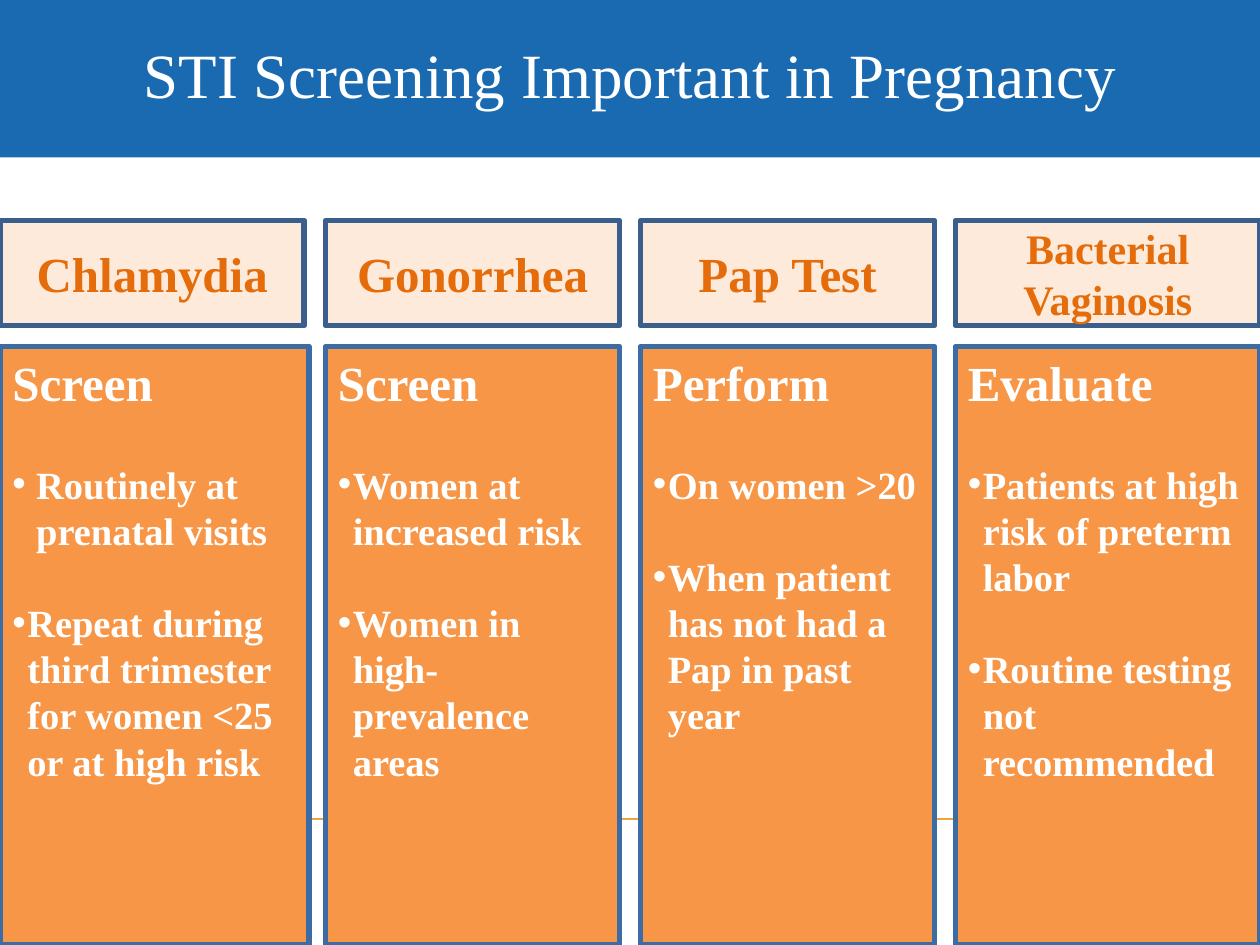
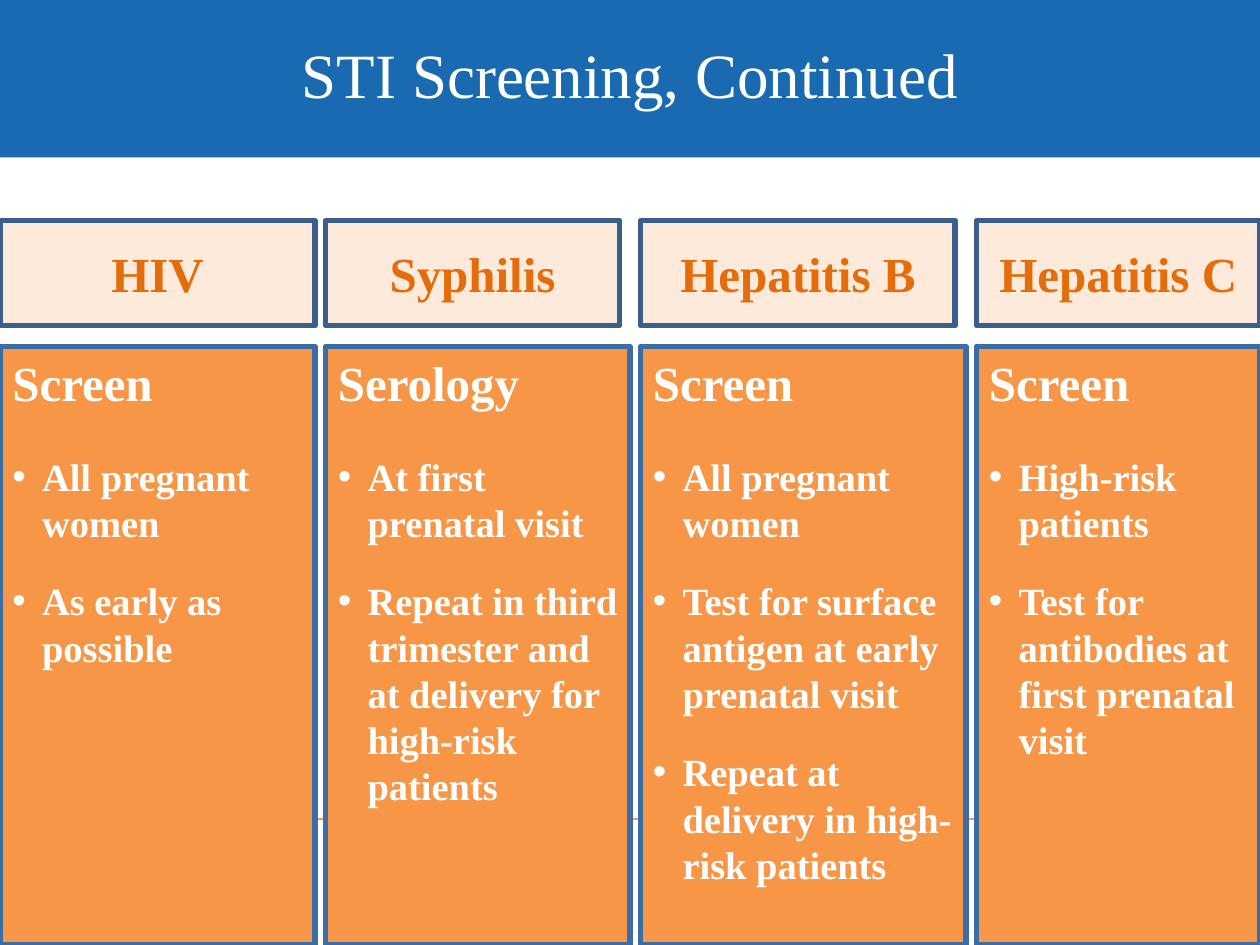
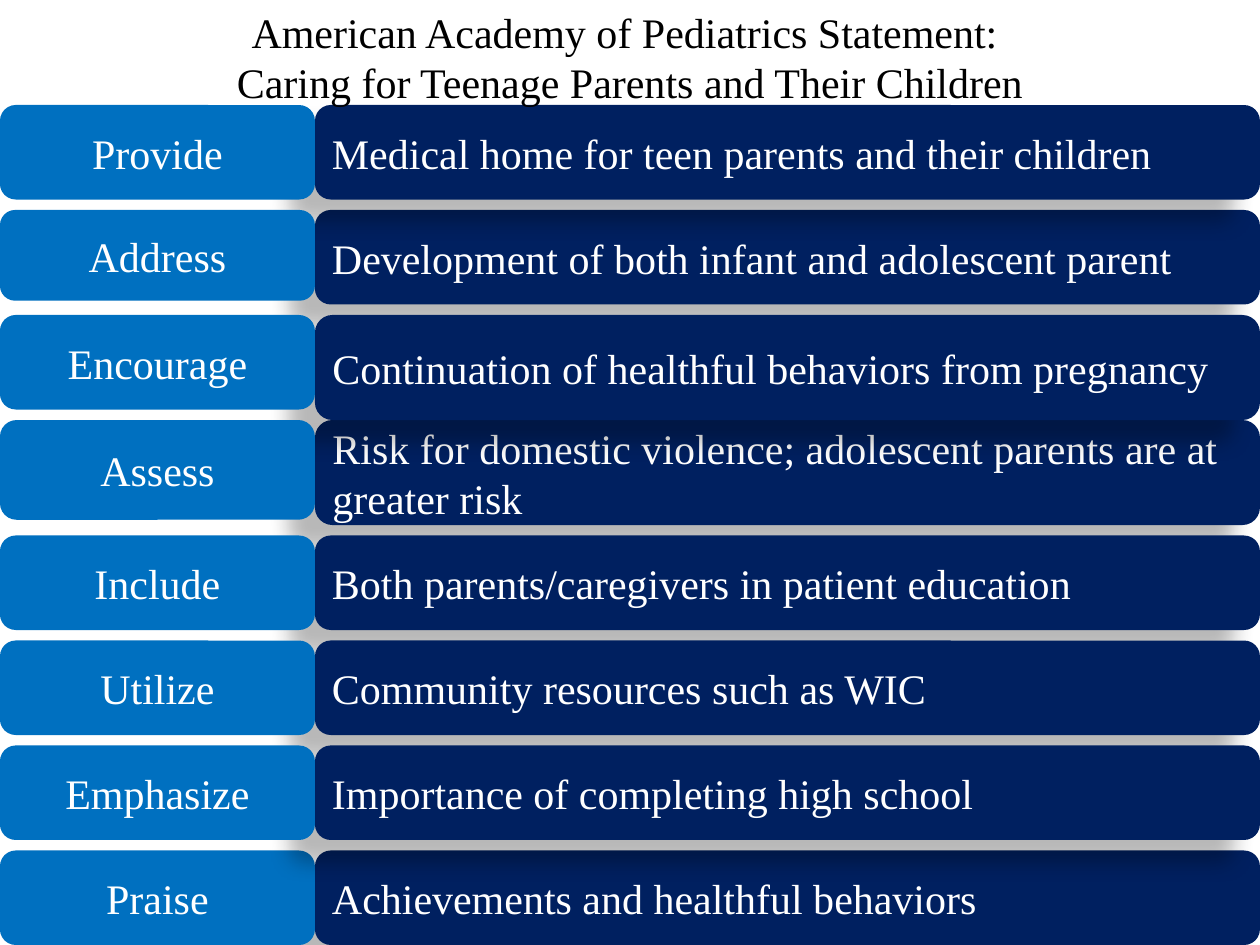
import pptx
import pptx.util
import pptx.dml.color
import pptx.enum.shapes
import pptx.enum.text
import pptx.oxml
from pptx.oxml.ns import nsdecls, qn

# ---- Content ----
# Column: left and widths in grid units, test, size, action, (advice, indent in cm)
SCREENING = [
    {
        "title": "STI Screening Important in Pregnancy",
        "gaps": (28, 26.4),
        "columns": [
            (0, 29, 29.4, "Chlamydia", 28, "Screen", [
                ("Routinely at prenatal visits", 0.48),
                ("Repeat during third trimester for women <25 or at high risk", 0.3)]),
            (31, 28, 28, "Gonorrhea", 28, "Screen", [
                ("Women at increased risk", 0.3),
                ("Women in high-prevalence areas", 0.3)]),
            (61, 28, 28, "Pap Test", 28, "Perform", [
                ("On women >20", 0.3),
                ("When patient has not had a Pap in past year", 0.3)]),
            (91, 29, 29, "Bacterial Vaginosis", 24, "Evaluate", [
                ("Patients at high risk of preterm labor", 0.3),
                ("Routine testing not recommended", 0.3)]),
        ],
    },
    {
        "title": "STI Screening, Continued",
        "gaps": (23.5, 18.5),
        "columns": [
            (0, 30, 30, "HIV", 28, "Screen", [
                ("All pregnant women", 0.6),
                ("As early as possible", 0.6)]),
            (31, 28, 29, "Syphilis", 28, "Serology", [
                ("At first prenatal visit", 0.6),
                ("Repeat in third trimester and at delivery for high-risk patients", 0.6)]),
            (61, 30, 31, "Hepatitis B", 28, "Screen", [
                ("All pregnant women", 0.6),
                ("Test for surface antigen at early prenatal visit", 0.6),
                ("Repeat at delivery in high-risk patients", 0.6)]),
            (93, 27, 27, "Hepatitis C", 28, "Screen", [
                ("High-risk patients", 0.6),
                ("Test for antibodies at first prenatal visit", 0.6)]),
        ],
    },
]

STATEMENT_TITLE = ["American Academy of Pediatrics Statement: ",
                   "Caring for Teenage Parents and Their Children"]
# Verb, recommendation, heights of both in grid units
STATEMENT = [
    ("Provide", "Medical home for teen parents and their children", 9, 9),
    ("Address", "Development of both infant and adolescent parent", 8.64, 9),
    ("Encourage", "Continuation of healthful behaviors from pregnancy", 9, 10),
    ("Assess", "Risk for domestic violence; adolescent parents are at greater risk", 9.5, 10),
    ("Include", "Both parents/caregivers in patient education", 9, 9),
    ("Utilize", "Community resources such as WIC", 9, 9),
    ("Emphasize", "Importance of completing high school", 9, 9),
    ("Praise", "Achievements and healthful behaviors", 9, 9),
]
# Rows from back to front; shadows fall on the rows behind
STACKING = [(1, 3, 4, 2, 0), (5,), (7,), (6,)]

# ---- Shared style ----
FONT = "Times New Roman"
WHITE, BLACK = "FFFFFF", "000000"
BAND, RULE = "196AB0", "EEA33C"
TEST_FILL, TEST_LINE, TEST_TEXT = "FDEADA", "3A5F8C", "E46C0A"
ADVICE_FILL, ADVICE_LINE = "F79646", "3C6CA6"
VERB_FILL, RECOMMENDATION_FILL = "0070C0", "002060"
RECT = pptx.enum.shapes.MSO_SHAPE.RECTANGLE
ROUNDED = pptx.enum.shapes.MSO_SHAPE.ROUNDED_RECTANGLE
LEFT, CENTER = pptx.enum.text.PP_ALIGN.LEFT, pptx.enum.text.PP_ALIGN.CENTER
TOP, MIDDLE = pptx.enum.text.MSO_ANCHOR.TOP, pptx.enum.text.MSO_ANCHOR.MIDDLE
WIDE, HIGH = 120, 90


def grid(units):
    """Twelve grid units make an inch."""
    return pptx.util.Cm(2.54 * units / 12)


def color(value):
    return pptx.dml.color.RGBColor.from_string(value)


def add_box(slide, preset, left, top, width, height, fill, line=None):
    box = slide.shapes.add_shape(preset, *map(grid, (left, top, width, height)))
    box.shadow.inherit = False
    box.fill.solid()
    box.fill.fore_color.rgb = color(fill)
    if line:
        box.line.color.rgb = color(line)
        box.line.width = pptx.util.Pt(3.35)
    else:
        box.line.fill.background()
    return box


def write(shape, lines, size, ink, bold=False, align=CENTER, anchor=MIDDLE):
    frame = shape.text_frame
    frame.word_wrap = True
    frame.vertical_anchor = anchor
    for number, line in enumerate(lines):
        paragraph = frame.add_paragraph() if number else frame.paragraphs[0]
        add_run(paragraph, line, size, ink, bold, align)


def add_run(paragraph, text, size, ink, bold, align):
    paragraph.alignment = align
    run = paragraph.add_run()
    run.text = text
    run.font.name = FONT
    run.font.size = pptx.util.Pt(size)
    run.font.bold = bold
    run.font.color.rgb = color(ink)


def add_bullet(frame, text, indent, gap):
    paragraph = frame.add_paragraph()
    properties = paragraph._p.get_or_add_pPr()
    properties.set("marL", str(pptx.util.Cm(indent)))
    properties.set("indent", str(-pptx.util.Cm(indent)))
    properties.append(pptx.oxml.parse_xml(f'<a:buFont {nsdecls("a")} typeface="Arial"/>'))
    properties.append(pptx.oxml.parse_xml(f'<a:buChar {nsdecls("a")} char="•"/>'))
    paragraph.space_before = pptx.util.Pt(gap)
    add_run(paragraph, text, 22, WHITE, True, LEFT)


def cast_shadow(shape):
    effects = shape._element.spPr.find(qn("a:effectLst"))
    effects.append(pptx.oxml.parse_xml(
        f'<a:outerShdw {nsdecls("a")} blurRad="{pptx.util.Pt(11.8)}" '
        f'dist="{pptx.util.Pt(19.7)}" dir="{141 * 60000}" algn="ctr" rotWithShape="0">'
        f'<a:srgbClr val="{BLACK}"><a:alpha val="28000"/></a:srgbClr></a:outerShdw>'))


def add_title_band(slide, title):
    add_box(slide, RECT, 0, 0, WIDE, 15, BAND)
    rule = slide.shapes.add_connector(pptx.enum.shapes.MSO_CONNECTOR.STRAIGHT,
                                      grid(9), grid(78), grid(111), grid(78))
    rule.line.color.rgb = color(RULE)
    rule.line.width = pptx.util.Pt(0.75)
    rule._element.spPr.append(pptx.oxml.parse_xml(f'<a:effectLst {nsdecls("a")}/>'))
    heading = slide.shapes.add_textbox(grid(6), grid(1), grid(108), grid(12))
    write(heading, [title], 36, WHITE)


def build_screening(slide, content):
    add_title_band(slide, content["title"])
    first_gap, next_gap = content["gaps"]
    for left, test_width, advice_width, test, size, action, advice in content["columns"]:
        advice_box = add_box(slide, RECT, left, 33, advice_width, HIGH - 33,
                             ADVICE_FILL, ADVICE_LINE)
        write(advice_box, [action], 28, WHITE, True, LEFT, TOP)
        for number, (text, indent) in enumerate(advice):
            add_bullet(advice_box.text_frame, text, indent, next_gap if number else first_gap)
        test_box = add_box(slide, RECT, left, 21, test_width, 10, TEST_FILL, TEST_LINE)
        write(test_box, [test], size, TEST_TEXT, True)


def build_statement(slide):
    verb_width, first_top, pitch = 30, 10, 10
    # The lower half starts one unit further down
    tops = [first_top + pitch * row + (row >= 4) for row in range(len(STATEMENT))]
    for batch in STACKING:
        for row in batch:
            _, recommendation, _, height = STATEMENT[row]
            bar = add_box(slide, ROUNDED, verb_width, tops[row], WIDE - verb_width, height,
                          RECOMMENDATION_FILL)
            cast_shadow(bar)
            write(bar, [recommendation], 24, WHITE, align=LEFT)
        for row in batch:
            verb, _, height, _ = STATEMENT[row]
            label = add_box(slide, ROUNDED, 0, tops[row], verb_width, height, VERB_FILL)
            write(label, [verb], 24, WHITE)
    heading = slide.shapes.add_textbox(0, 0, grid(WIDE), grid(10.9))
    write(heading, STATEMENT_TITLE, 24, BLACK, anchor=TOP)


def main():
    deck = pptx.Presentation()
    deck.slide_width, deck.slide_height = grid(WIDE), grid(HIGH)
    blank = deck.slide_layouts[6]
    for content in SCREENING:
        build_screening(deck.slides.add_slide(blank), content)
    build_statement(deck.slides.add_slide(blank))
    deck.save("out.pptx")


if __name__ == "__main__":
    main()
